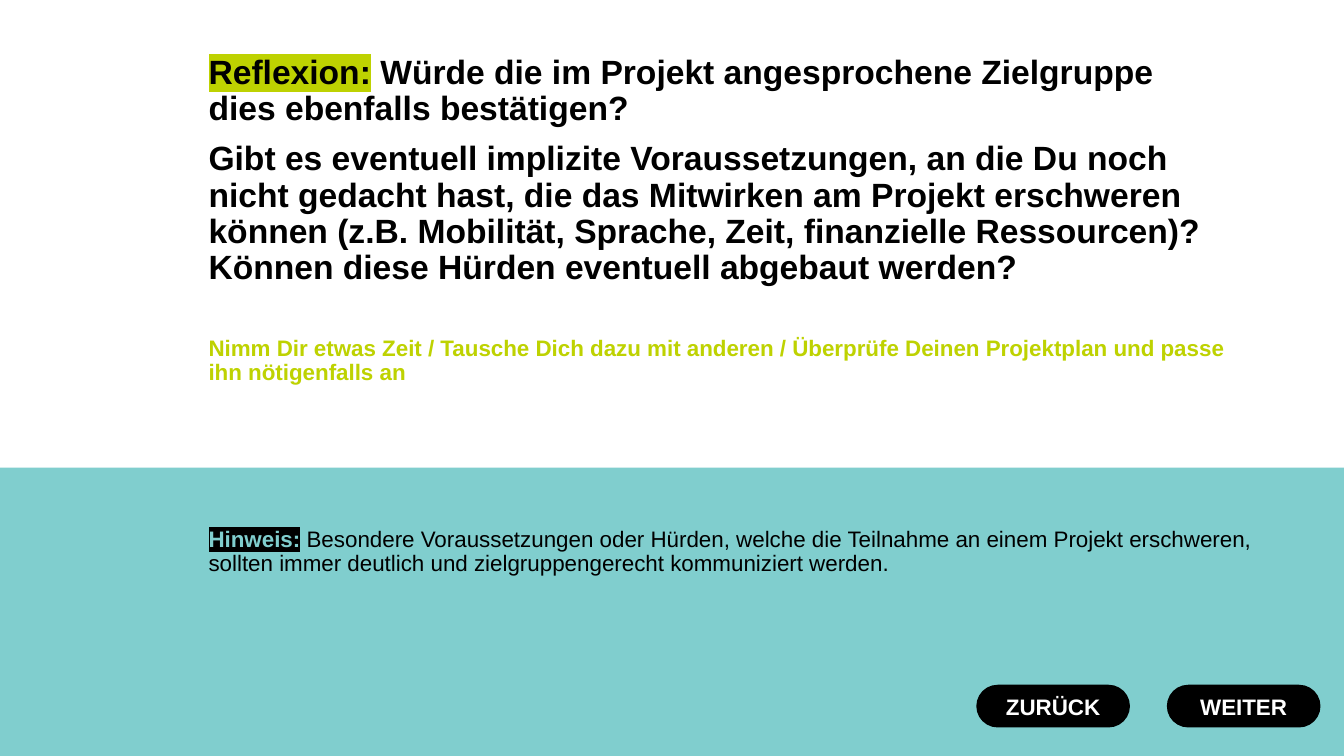
"""Build the reflection slide with its hint band and navigation buttons."""
import pptx
import pptx.dml.color
import pptx.enum.shapes
import pptx.enum.text
import pptx.oxml
import pptx.oxml.ns
import pptx.util

Inches = pptx.util.Inches
Pt = pptx.util.Pt
SHAPES = pptx.enum.shapes.MSO_SHAPE
BLACK, WHITE, LIME, TEAL = "000000", "FFFFFF", "BED201", "80CECE"


def colour(value):
    return pptx.dml.color.RGBColor.from_string(value)


def assign(target, values):
    for name, value in values.items():
        setattr(target, name, value)


class SlideBuilder:
    font_name = "Arial"

    def __init__(self, page):
        self.page = page

    def span(self, para, text, size, shade=BLACK, bold=True, highlight=None):
        run = para.add_run()
        run.text = text
        assign(run.font, {"name": self.font_name, "size": Pt(size), "bold": bold})
        run.font.color.rgb = colour(shade)
        if highlight:
            mark = pptx.oxml.parse_xml(
                f'<a:highlight {pptx.oxml.ns.nsdecls("a")}>'
                f'<a:srgbClr val="{highlight}"/></a:highlight>'
            )
            run.font.fill._xPr.find(pptx.oxml.ns.qn("a:solidFill")).addnext(mark)

    def text_box(self, left, top, width, height):
        box = self.page.shapes.add_textbox(
            Inches(left), Inches(top), Inches(width), Inches(height)
        )
        box.text_frame.word_wrap = True
        return box.text_frame

    def paragraph(self, frame, space_before=0):
        para = frame.add_paragraph() if space_before else frame.paragraphs[0]
        assign(para, {"line_spacing": 0.9, "space_before": Pt(space_before)})
        return para

    def shape(self, kind, left, top, width, height, fill):
        shape = self.page.shapes.add_shape(
            kind, Inches(left), Inches(top), Inches(width), Inches(height)
        )
        shape.shadow.inherit = False
        shape.fill.solid()
        shape.fill.fore_color.rgb = colour(fill)
        shape.line.fill.background()
        return shape

    def button(self, label, left):
        button = self.shape(SHAPES.ROUNDED_RECTANGLE, left, 6.8, 1.51, 0.41, BLACK)
        button.adjustments[0] = 0.5
        button.line.color.rgb = colour(BLACK)
        button.line.width = Pt(1)
        button.text_frame.vertical_anchor = pptx.enum.text.MSO_ANCHOR.MIDDLE
        para = button.text_frame.paragraphs[0]
        para.alignment = pptx.enum.text.PP_ALIGN.CENTER
        self.span(para, label, 16, WHITE)


def main():
    deck = pptx.Presentation()
    assign(deck, {"slide_width": Inches(13.33), "slide_height": Inches(7.5)})
    builder = SlideBuilder(deck.slides.add_slide(deck.slide_layouts[6]))
    builder.shape(SHAPES.RECTANGLE, 0, 4.64, 13.33, 2.86, TEAL)

    reflection = builder.text_box(1.97, 0.5, 10.45, 4.14)
    question = builder.paragraph(reflection)
    builder.span(question, "Reflexion:", 24, highlight=LIME)
    builder.span(question, " Würde die im Projekt angesprochene Zielgruppe", 24)
    question.add_line_break()
    builder.span(question, "dies ebenfalls bestätigen?", 24)
    builder.span(
        builder.paragraph(reflection, 10),
        "Gibt es eventuell implizite Voraussetzungen, an die Du noch nicht gedacht "
        "hast, die das Mitwirken am Projekt erschweren können (z.B. Mobilität, "
        "Sprache, Zeit, finanzielle Ressourcen)? Können diese Hürden eventuell "
        "abgebaut werden?",
        24,
    )
    builder.span(
        builder.paragraph(reflection, 36),
        "Nimm Dir etwas Zeit / Tausche Dich dazu mit anderen / Überprüfe Deinen "
        "Projektplan und passe ihn nötigenfalls an",
        16,
        LIME,
    )

    hint = builder.paragraph(builder.text_box(1.97, 5.19, 11.12, 1.6))
    builder.span(hint, "Hinweis:", 16, TEAL, highlight=BLACK)
    builder.span(
        hint,
        " Besondere Voraussetzungen oder Hürden, welche die Teilnahme an einem "
        "Projekt erschweren, sollten immer deutlich und zielgruppengerecht "
        "kommuniziert werden.",
        16,
        bold=False,
    )

    for label, left in (("ZURÜCK", 9.69), ("WEITER", 11.58)):
        builder.button(label, left)
    deck.save("out.pptx")


if __name__ == "__main__":
    main()
